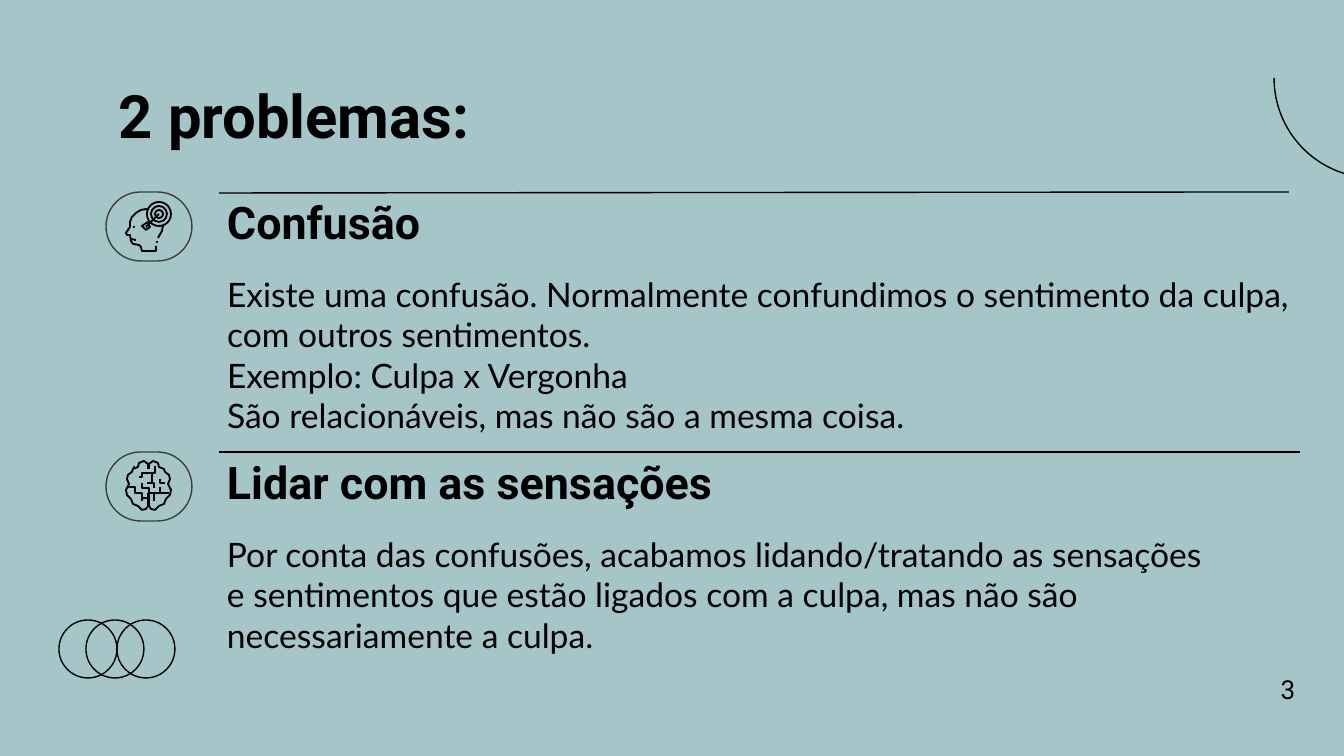
from lxml.etree import SubElement
from pptx import Presentation
from pptx.dml.color import RGBColor
from pptx.enum.shapes import MSO_CONNECTOR, MSO_SHAPE
from pptx.enum.text import MSO_ANCHOR, PP_ALIGN
from pptx.oxml.ns import qn
from pptx.util import Pt

PX = 6804
BLACK = RGBColor(0x00, 0x00, 0x00)
OLIVE = RGBColor(0x3C, 0x3F, 0x35)
TEAL = RGBColor(0xA6, 0xC5, 0xC9)

prs = Presentation()
prs.slide_width, prs.slide_height = 1344 * PX, 756 * PX
slide = prs.slides.add_slide(prs.slide_layouts[6])
slide.background.fill.solid()
slide.background.fill.fore_color.rgb = TEAL
shapes = slide.shapes


def add_text(text, left, top, width, height, size, font="Roboto", bold=False,
             anchor=MSO_ANCHOR.TOP, align=PP_ALIGN.LEFT, spacing=None):
    box = shapes.add_textbox(left * PX, top * PX, width * PX, height * PX)
    frame = box.text_frame
    frame.word_wrap = True
    frame.vertical_anchor = anchor
    frame.margin_left = frame.margin_right = 13 * PX
    frame.margin_top = frame.margin_bottom = 13 * PX
    frame.text = text
    for paragraph in frame.paragraphs:
        paragraph.alignment = align
        paragraph.line_spacing = spacing
        paragraph.font.name = font
        paragraph.font.size = Pt(size)
        paragraph.font.bold = bold
        paragraph.font.color.rgb = BLACK


def add_outline(kind, left, top, width, height, color=BLACK, weight=0.75):
    outline = shapes.add_shape(kind, left * PX, top * PX, width * PX, height * PX)
    outline.shadow.inherit = False
    outline.fill.background()
    outline.line.color.rgb = color
    outline.line.width = Pt(weight)
    return outline


for left in (59, 86, 117):
    add_outline(MSO_SHAPE.OVAL, left, 620, 58, 58)

corner_arc = add_outline(MSO_SHAPE.ARC, 1274, -22, 200, 200)
corner_arc.adjustments[0] = 97.2
corner_arc.adjustments[1] = 0
corner_arc.rotation = 180

add_text("2 problemas:", 106, 66, 1133, 85, 32, bold=True)

sections = [
    (192, "Confusão", 1105, (1289, 192, 219, 193),
     "Existe uma confusão. Normalmente confundimos o sentimento da culpa, com outros sentimentos.\n"
     "Exemplo: Culpa x Vergonha\n"
     "São relacionáveis, mas não são a mesma coisa."),
    (452, "Lidar com as sensações", 1024, (1300, 452, 219, 452),
     "Por conta das confusões, acabamos lidando/tratando as sensações e sentimentos "
     "que estão ligados com a culpa, mas não são necessariamente a culpa."),
]
for top, heading, body_width, rule_ends, body in sections:
    add_text(heading, 214, top, 622, 69, 24, bold=True, anchor=MSO_ANCHOR.BOTTOM)
    add_text(body, 214, top + 69, body_width, 151, 18, font="Lato")
    pill = add_outline(MSO_SHAPE.ROUNDED_RECTANGLE, 106, top, 86, 69, OLIVE)
    pill.adjustments[0] = 0.5
    rule = shapes.add_connector(MSO_CONNECTOR.STRAIGHT, *(end * PX for end in rule_ends))
    rule.line.color.rgb = BLACK
    rule.line.width = Pt(0.75)
    SubElement(rule._element.spPr, qn("a:effectLst"))

add_text("3", 1245, 664, 86, 58, 14, align=PP_ALIGN.CENTER, spacing=0.9)

head = [
    [(147, 209), (141, 210), (136, 213), (132, 217), (130, 222), (130, 227),
     (126, 233), (127, 235), (130, 235), (131, 241), (133, 244), (139, 245),
     (141, 247), (142, 251), (156, 251), (156, 246)],
    [(131, 239), (136, 240)],
    [(163, 226), (162, 231), (158, 238)],
    [(159, 214), (146, 227)],
    [(148, 222), (142, 226), (146, 230), (150, 227), (148, 222)],
]
left_lobe = [(148, 493), (148, 506), (146, 509), (142, 510), (138, 506), (133, 504),
             (131, 499), (127, 495), (126, 490), (129, 484), (127, 479), (128, 475),
             (132, 472), (133, 469), (138, 467), (139, 463), (144, 461), (148, 464),
             (148, 469)]
brain = [
    left_lobe,
    [(297 - x, y) for x, y in left_lobe],
    [(128, 487), (135, 487), (135, 493), (142, 493), (142, 501)],
    [(142, 498), (148, 498)],
    [(142, 483), (142, 488), (149, 488), (149, 493), (169, 493)],
    [(154, 493), (154, 501)],
    [(160, 487), (160, 493)],
    [(139, 477), (142, 477), (142, 473), (155, 473), (155, 466)],
    [(152, 473), (152, 483)],
    [(147, 483), (154, 483), (154, 488)],
    [(160, 479), (160, 483), (165, 483)],
]
for strokes in (head, brain):
    builder = shapes.build_freeform(*strokes[0][0], scale=PX)
    builder.add_line_segments(strokes[0][1:], close=False)
    for stroke in strokes[1:]:
        builder.move_to(*stroke[0])
        builder.add_line_segments(stroke[1:], close=False)
    icon = builder.convert_to_shape()
    icon.shadow.inherit = False
    icon.fill.background()
    icon.line.color.rgb = BLACK
    icon.line.width = Pt(1)

for radius in (12, 8, 4):
    add_outline(MSO_SHAPE.OVAL, 159 - radius, 214 - radius, 2 * radius, 2 * radius, weight=1)

for left, top in ((133, 226), (156, 241), (133, 466)):
    dot = add_outline(MSO_SHAPE.OVAL, left, top, 2, 2)
    dot.fill.solid()
    dot.fill.fore_color.rgb = BLACK
    dot.line.fill.background()

prs.save("out.pptx")
